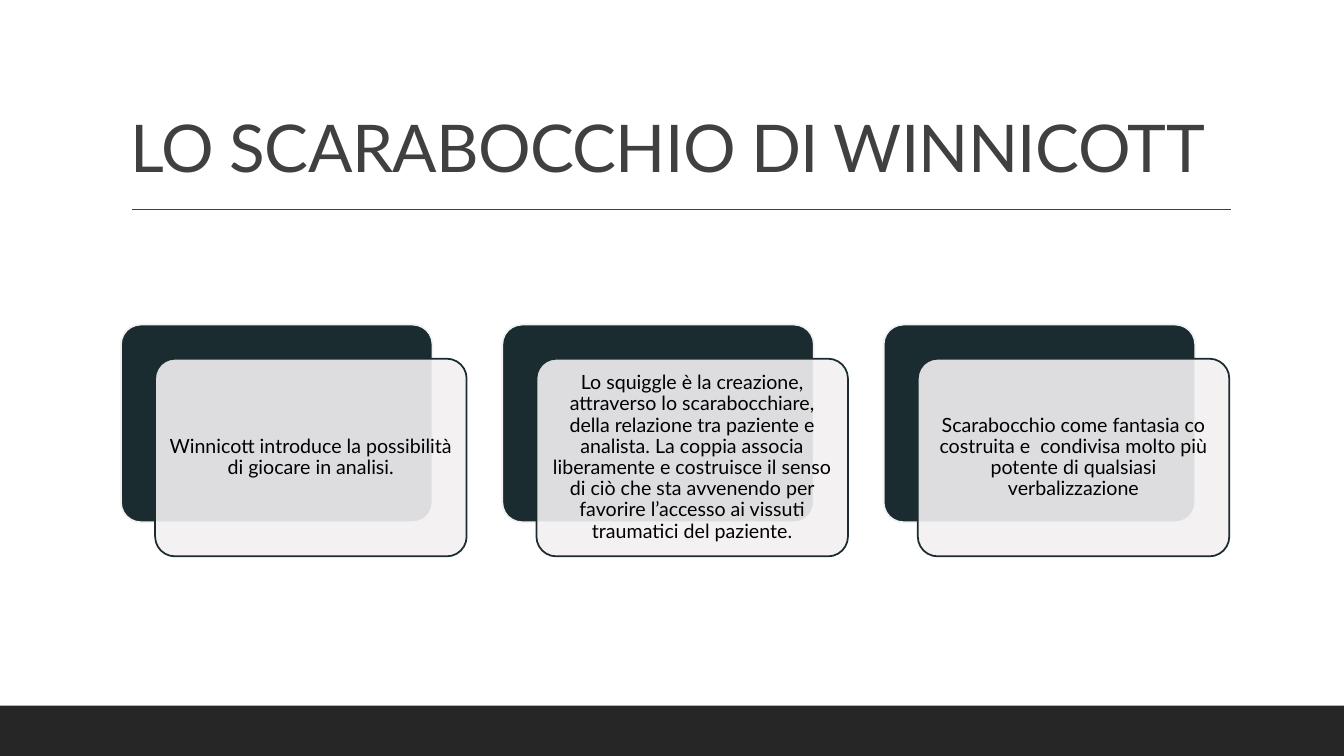
from lxml import etree
from pptx import Presentation
from pptx.dml.color import RGBColor
from pptx.enum import shapes, text
from pptx.oxml import ns
from pptx.util import Cm, Pt

FONT = "Lato"
DARK = "1B2C30"
PALE = "F3F0F1"
GREY = "404040"
CARD_W, CARD_H = 7.85, 4.98
CARD_LEFT, CARD_TOP, CARD_STEP = 3.05, 8.18, 9.61
CARD_SHIFT = 0.86
CARDS = [
    "Winnicott introduce la possibilità di giocare in analisi.",
    "Lo squiggle è la creazione, attraverso lo scarabocchiare, della relazione "
    "tra paziente e analista. La coppia associa liberamente e costruisce il "
    "senso di ciò che sta avvenendo per favorire l’accesso ai vissuti "
    "traumatici del paziente.",
    "Scarabocchio come fantasia co costruita e  condivisa molto più potente "
    "di qualsiasi verbalizzazione",
]


def rgb(color):
    return RGBColor.from_string(color)


def write(sp, words, size, color, align, anchor):
    tf = sp.text_frame
    tf.word_wrap = True
    tf.vertical_anchor = anchor
    p = tf.paragraphs[0]
    p.alignment = align
    p.line_spacing = 0.9
    r = p.add_run()
    r.text = words
    r.font.name = FONT
    r.font.size = Pt(size)
    r.font.color.rgb = rgb(color)
    return r


def add_box(s, kind, x, y, w, h, fill, line=None):
    sp = s.shapes.add_shape(kind, Cm(x), Cm(y), Cm(w), Cm(h))
    sp.shadow.inherit = False
    sp.fill.solid()
    sp.fill.fore_color.rgb = rgb(fill)
    if line:
        sp.line.color.rgb = rgb(line)
        sp.line.width = Pt(1.25)
    else:
        sp.line.fill.background()
    return sp


def add_rounded(s, x, y, fill, line):
    sp = add_box(s, shapes.MSO_SHAPE.ROUNDED_RECTANGLE, x, y, CARD_W, CARD_H, fill, line)
    sp.adjustments[0] = 0.1
    return sp


def set_opacity(sp, percent):
    color = sp.fill._xPr.find(ns.qn("a:solidFill"))[0]
    etree.SubElement(color, ns.qn("a:alpha"), val=str(percent * 1000))


def add_card(s, x, y, words):
    add_rounded(s, x, y, DARK, PALE)
    front = add_rounded(s, x + CARD_SHIFT, y + CARD_SHIFT, PALE, DARK)
    set_opacity(front, 90)
    tf = front.text_frame
    tf.margin_left = tf.margin_right = tf.margin_top = tf.margin_bottom = Cm(0.15)
    write(front, words, 14, "000000", text.PP_ALIGN.CENTER, text.MSO_ANCHOR.MIDDLE)


def add_title(s, words):
    sp = s.shapes.add_textbox(Cm(3.05), Cm(0.79), Cm(27.94), Cm(4.04))
    r = write(sp, words, 47, GREY, text.PP_ALIGN.LEFT, text.MSO_ANCHOR.BOTTOM)
    r.font._element.set("spc", "-50")


def add_rule(s, x1, x2, y):
    line = s.shapes.add_connector(shapes.MSO_CONNECTOR.STRAIGHT, Cm(x1), Cm(y), Cm(x2), Cm(y))
    line.line.color.rgb = rgb(GREY)
    line.line.width = Pt(1)
    etree.SubElement(line._element.spPr, ns.qn("a:effectLst"))


def main():
    prs = Presentation()
    prs.slide_width, prs.slide_height = Cm(33.87), Cm(19.05)
    s = prs.slides.add_slide(prs.slide_layouts[6])
    add_title(s, "LO SCARABOCCHIO DI WINNICOTT")
    add_rule(s, 3.33, 31.01, 5.28)
    add_box(s, shapes.MSO_SHAPE.RECTANGLE, 0, 17.78, 33.87, 1.27, "262626")
    for i, words in enumerate(CARDS):
        add_card(s, CARD_LEFT + i * CARD_STEP, CARD_TOP, words)
    prs.save("out.pptx")


if __name__ == "__main__":
    main()
